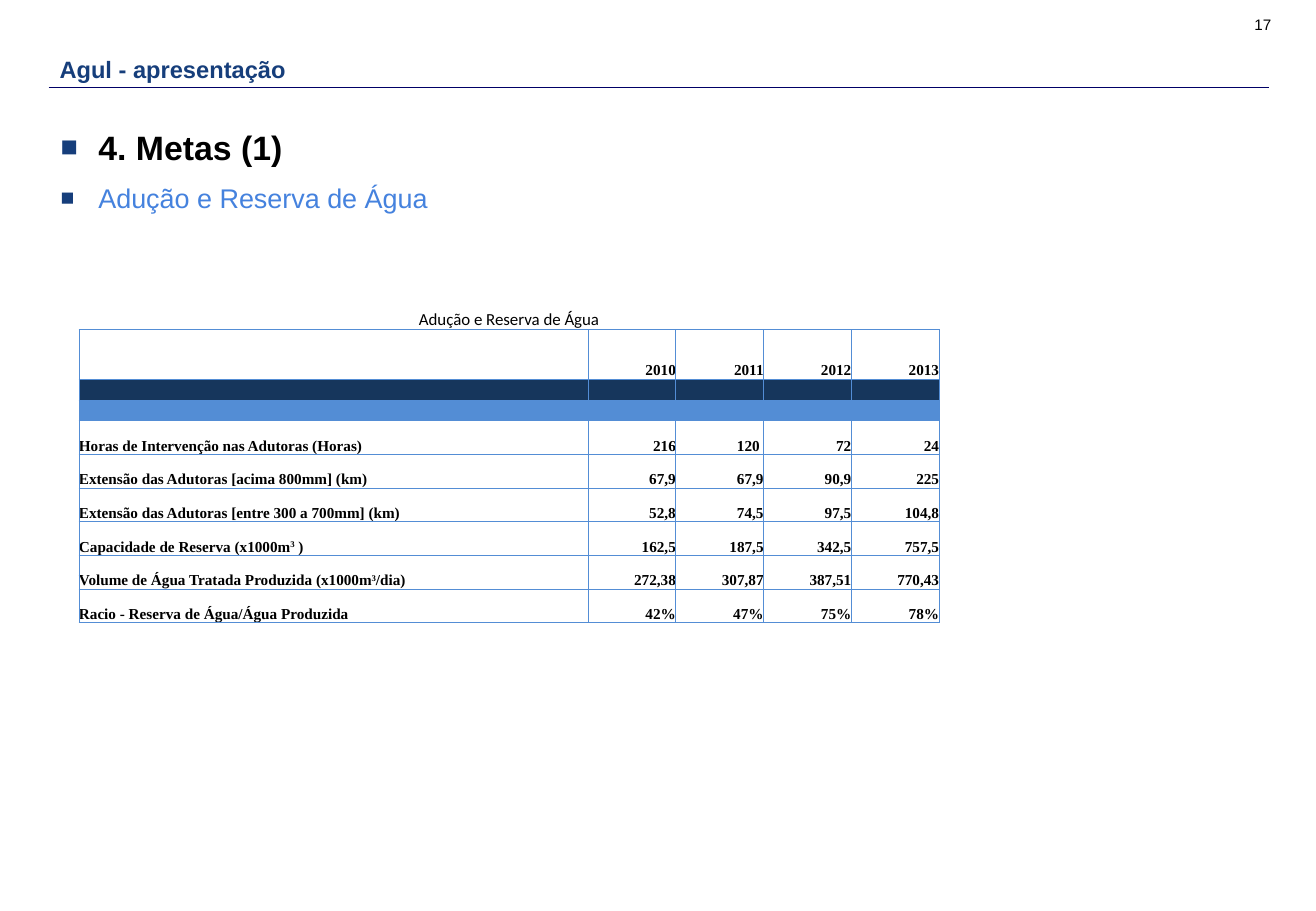
"""Build the water supply and storage targets slide."""
from lxml.etree import SubElement
from pptx import Presentation
from pptx.dml.color import RGBColor
from pptx.enum.shapes import MSO_CONNECTOR
from pptx.enum.text import MSO_ANCHOR, MSO_AUTO_SIZE, PP_ALIGN
from pptx.oxml.ns import qn
from pptx.util import Inches, Pt

BLACK = RGBColor(0x00, 0x00, 0x00)
NAVY = RGBColor(0x16, 0x3E, 0x7B)
SKY = RGBColor(0x45, 0x82, 0xDE)
RULE = RGBColor(0x00, 0x00, 0x66)
DARK_BAND = RGBColor(0x16, 0x36, 0x5C)
LIGHT_BAND = RGBColor(0x53, 0x8D, 0xD5)

TITLE = "Agul - apresentação"
PAGE = "17"
BULLETS = [
    ("4. Metas (1)", {"size": Pt(20), "bold": True}, BLACK, Pt(0)),
    ("Adução e Reserva de Água", {"size": Pt(16), "bold": False}, SKY, Pt(8.8)),
]
BLANK = ("",) * 5
ROWS = [
    ("Adução e Reserva de Água", "", "", "", ""),
    ("", "2010", "2011", "2012", "2013"),
    BLANK,
    BLANK,
    ("Horas de Intervenção nas Adutoras (Horas)", "216", "120 ", "72", "24"),
    ("Extensão das Adutoras [acima 800mm] (km)", "67,9", "67,9", "90,9", "225"),
    ("Extensão das Adutoras [entre 300 a 700mm] (km)", "52,8", "74,5", "97,5", "104,8"),
    ("Capacidade de Reserva (x1000m^3^ )", "162,5", "187,5", "342,5", "757,5"),
    ("Volume de Água Tratada Produzida (x1000m^3^/dia)", "272,38", "307,87", "387,51", "770,43"),
    ("Racio - Reserva de Água/Água Produzida", "42%", "47%", "75%", "78%"),
]
BANDS = {2: DARK_BAND, 3: LIGHT_BAND}

WIDTH, HEIGHT = Inches(10.83), Inches(7.5)
TITLE_BOX = (3.6, 2, 92.71, 11.07)
BODY_BOX = (3.69, 13.2, 44.51, 9.2)
PAGE_BOX = (76.73, 0.8, 20.78, 3.73)
TABLE_BOX = (6, 33.2, 65.37, 35.2)
RULE_LEFT, RULE_RIGHT, RULE_Y = 3.69, 96.4, 9.6
COLS = [38.69] + [6.67] * 4
ROW_HEIGHTS = [3, 5.4, 2.3, 2.3] + [3.7] * 6


def across(percent):
    return round(WIDTH * percent / 100)


def down(percent):
    return round(HEIGHT * percent / 100)


def box(left, top, width, height):
    return across(left), down(top), across(width), down(height)


def assign(obj, values):
    for name, value in values.items():
        setattr(obj, name, value)


def place(sp, area):
    assign(sp, dict(zip(("left", "top", "width", "height"), box(*area))))


def write(p, text, color, **font):
    for i, part in enumerate(text.split("^")):
        r = p.add_run()
        r.text = part
        assign(r.font, font)
        r.font.color.rgb = color
        if i % 2:
            r.font._element.set("baseline", "30000")


def add_bullet(p):
    pPr = p._p.get_or_add_pPr()
    assign_xml = {"marL": str(Inches(0.31)), "indent": str(-Inches(0.31))}
    for name, value in assign_xml.items():
        pPr.set(name, value)
    SubElement(SubElement(pPr, qn("a:buClr")), qn("a:srgbClr"), val=str(NAVY))
    SubElement(pPr, qn("a:buSzPct"), val="85000")
    SubElement(pPr, qn("a:buFont"), typeface="Arial")
    SubElement(pPr, qn("a:buChar"), char="■")


def add_borders(cell, visible):
    tcPr = cell._tc.get_or_add_tcPr()
    for side in "LRTB":
        ln = SubElement(tcPr, qn(f"a:ln{side}"), w=str(Pt(0.5)))
        if side in visible:
            SubElement(SubElement(ln, qn("a:solidFill")), qn("a:srgbClr"), val=str(LIGHT_BAND))
        else:
            SubElement(ln, qn("a:noFill"))


def fill_cell(cell, i, j, text):
    add_borders(cell, "LRTB" if i else "B")
    if i in BANDS:
        cell.fill.solid()
        cell.fill.fore_color.rgb = BANDS[i]
    else:
        cell.fill.background()
    assign(cell, {"margin_left": 0, "margin_right": 0, "margin_top": 0,
                  "margin_bottom": 0, "vertical_anchor": MSO_ANCHOR.BOTTOM})
    p = cell.text_frame.paragraphs[0]
    p.alignment = PP_ALIGN.CENTER if i == 0 else PP_ALIGN.RIGHT if j else PP_ALIGN.LEFT
    if text and i == 0:
        write(p, text, BLACK, name="Calibri", size=Pt(10), bold=False)
    elif text:
        write(p, text, BLACK, name="Times New Roman", size=Pt(9), bold=True)
    SubElement(p._p, qn("a:endParaRPr"), sz="900")


def add_targets(slide):
    table = slide.shapes.add_table(len(ROWS), len(COLS), *box(*TABLE_BOX)).table
    assign(table, {"first_row": False, "horz_banding": False})
    for col, width in zip(table.columns, COLS):
        col.width = across(width)
    for i, (row, height, texts) in enumerate(zip(table.rows, ROW_HEIGHTS, ROWS)):
        row.height = down(height)
        for j, text in enumerate(texts):
            fill_cell(table.cell(i, j), i, j, text)
    table.cell(0, 0).merge(table.cell(0, len(COLS) - 1))


def main():
    prs = Presentation()
    assign(prs, {"slide_width": WIDTH, "slide_height": HEIGHT})
    slide = prs.slides.add_slide(prs.slide_layouts[1])
    title, body = slide.placeholders

    place(title, TITLE_BOX)
    tf = title.text_frame
    assign(tf, {"vertical_anchor": MSO_ANCHOR.MIDDLE, "auto_size": MSO_AUTO_SIZE.NONE})
    tf.paragraphs[0].alignment = PP_ALIGN.LEFT
    write(tf.paragraphs[0], TITLE, NAVY, name="Arial", size=Pt(14), bold=True)

    place(body, BODY_BOX)
    tf = body.text_frame
    tf.auto_size = MSO_AUTO_SIZE.NONE
    for i, (text, font, color, space) in enumerate(BULLETS):
        p = tf.add_paragraph() if i else tf.paragraphs[0]
        assign(p, {"alignment": PP_ALIGN.JUSTIFY, "space_before": space})
        add_bullet(p)
        write(p, text, color, name="Arial", **font)

    rule = slide.shapes.add_connector(
        MSO_CONNECTOR.STRAIGHT, across(RULE_LEFT), down(RULE_Y), across(RULE_RIGHT), down(RULE_Y))
    rule.line.color.rgb = RULE
    rule.line.width = Pt(0.75)
    SubElement(rule._element.spPr, qn("a:effectLst"))

    tf = slide.shapes.add_textbox(*box(*PAGE_BOX)).text_frame
    assign(tf, {"word_wrap": True, "vertical_anchor": MSO_ANCHOR.MIDDLE})
    tf.paragraphs[0].alignment = PP_ALIGN.RIGHT
    write(tf.paragraphs[0], PAGE, BLACK, name="Arial", size=Pt(9))

    add_targets(slide)
    prs.save("out.pptx")


if __name__ == "__main__":
    main()
